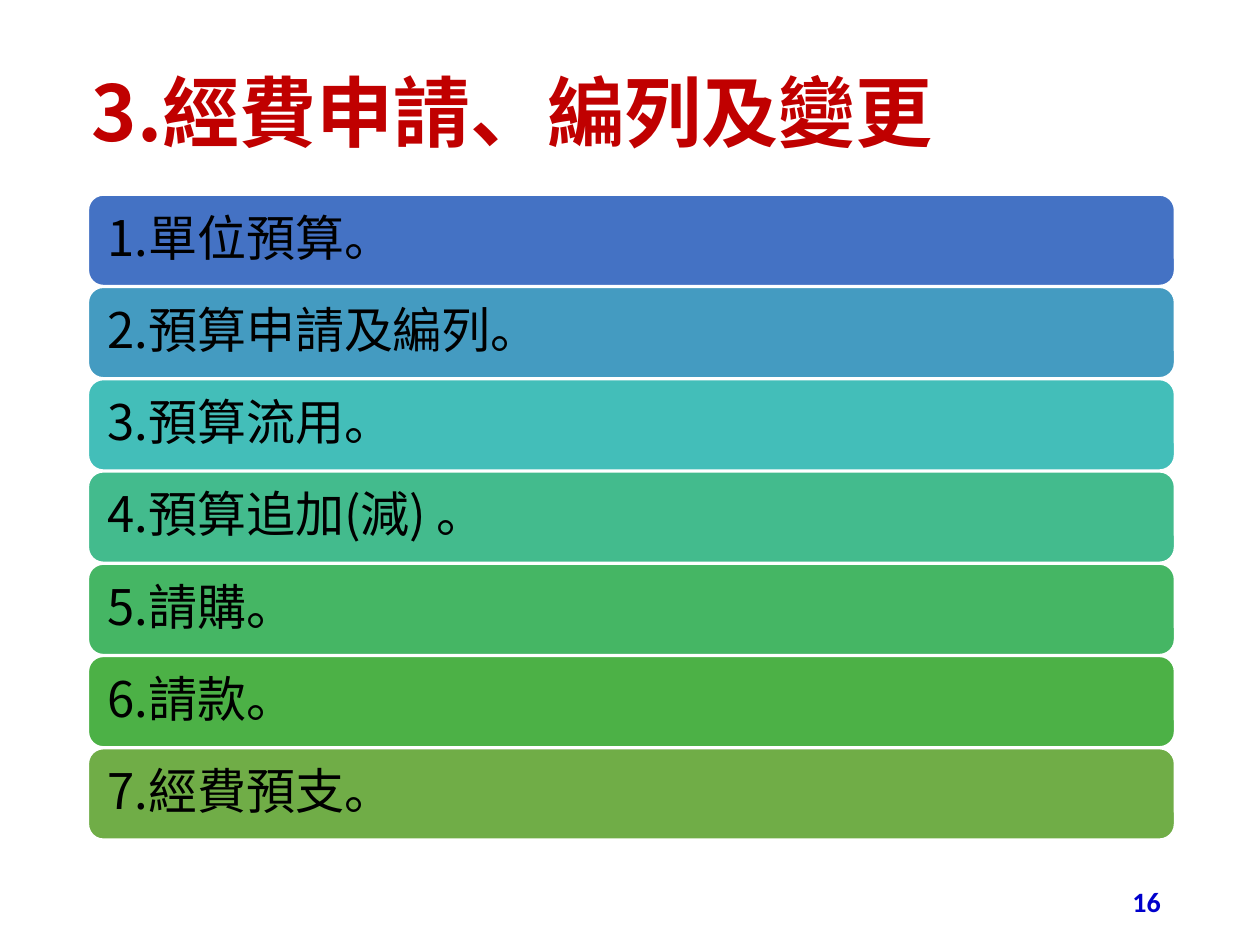
import pptx
import pptx.util
import pptx.dml.color
import pptx.enum.shapes
import pptx.enum.text
import pptx.oxml
import pptx.oxml.ns

Cm, Pt = pptx.util.Cm, pptx.util.Pt
ALIGN = pptx.enum.text.PP_ALIGN
CJK = "Noto Sans CJK SC"


def tint(code):
    return pptx.dml.color.RGBColor.from_string(code)


class Deck:
    """Holds the text style and the current slide."""

    def __init__(self, prs):
        self.page = prs.slides.add_slide(prs.slide_layouts[5])

    def label(self, shape, text, size, color, font=CJK, bold=False,
              align=ALIGN.LEFT, inset=None, space=0.9):
        frame = shape.text_frame
        frame.word_wrap = True
        frame.auto_size = pptx.enum.text.MSO_AUTO_SIZE.NONE
        frame.vertical_anchor = pptx.enum.text.MSO_ANCHOR.MIDDLE
        if inset is not None:
            frame.margin_left = frame.margin_right = inset
            frame.margin_top = frame.margin_bottom = inset
        para = frame.paragraphs[0]
        para.alignment = align
        para.line_spacing = space
        run = para.add_run()
        run.text = text
        run.font.size = Pt(size)
        run.font.bold = bold
        run.font.name = font
        run.font.color.rgb = tint(color)
        # East Asian glyphs take their font from a:ea
        east = pptx.oxml.parse_xml(
            f'<a:ea {pptx.oxml.ns.nsdecls("a")} typeface="{font}"/>')
        run.font._element.find(pptx.oxml.ns.qn("a:latin")).addnext(east)

    def title(self, text, left, top, width, height):
        head = self.page.shapes.title
        head.left, head.top, head.width, head.height = left, top, width, height
        self.label(head, text, 44, "C00000", bold=True)

    def bar(self, text, fill, left, top, width, height):
        bar = self.page.shapes.add_shape(
            pptx.enum.shapes.MSO_SHAPE.ROUNDED_RECTANGLE,
            left, top, width, height)
        bar.shadow.inherit = False
        bar.fill.solid()
        bar.fill.fore_color.rgb = tint(fill)
        bar.line.color.rgb = tint("FFFFFF")
        bar.line.width = Pt(1)
        self.label(bar, text, 28, "000000", inset=Cm(0.3))

    def number(self, text, left, top, width, height):
        box = self.page.shapes.add_textbox(left, top, width, height)
        self.label(box, text, 16, "0000CC", font="Calibri", bold=True,
                   align=ALIGN.RIGHT, space=1.0)


def main():
    prs = pptx.Presentation()
    prs.slide_width, prs.slide_height = Cm(25.4), Cm(19.05)
    deck = Deck(prs)

    # Heading
    deck.title("3.經費申請、編列及變更", Cm(1.6), Cm(0.79), Cm(21.9), Cm(3.12))

    # Topic bars, evenly stacked
    topics = [
        ("1.單位預算。", "4472C4"),
        ("2.預算申請及編列。", "449BC1"),
        ("3.預算流用。", "43BEB9"),
        ("4.預算追加(減) 。", "43BB8D"),
        ("5.請購。", "45B664"),
        ("6.請款。", "4CB146"),
        ("7.經費預支。", "70AD47"),
    ]
    for i, (text, fill) in enumerate(topics):
        deck.bar(text, fill, Cm(1.78), Cm(3.93 + 1.86 * i), Cm(21.9), Cm(1.83))

    # Page number
    deck.number("16", Cm(17.93), Cm(17.65), Cm(5.72), Cm(1.02))

    prs.save("out.pptx")


if __name__ == "__main__":
    main()
